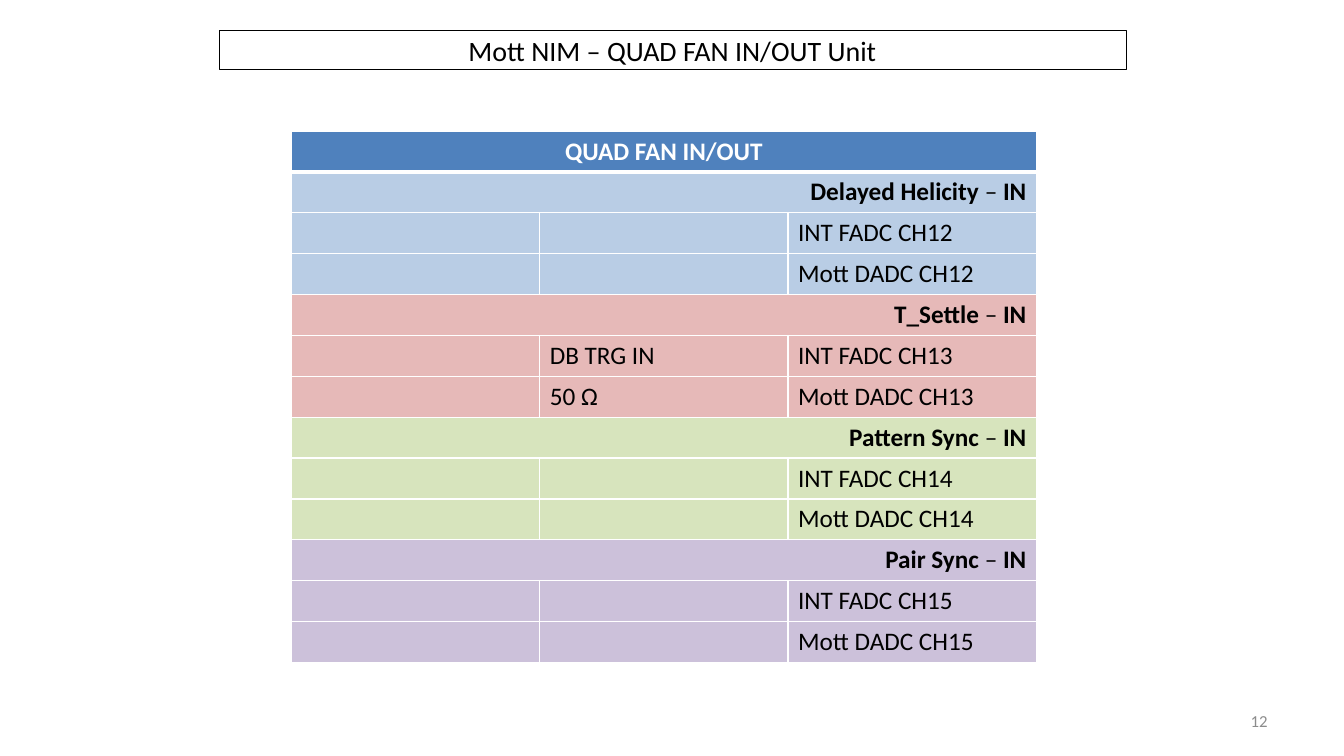
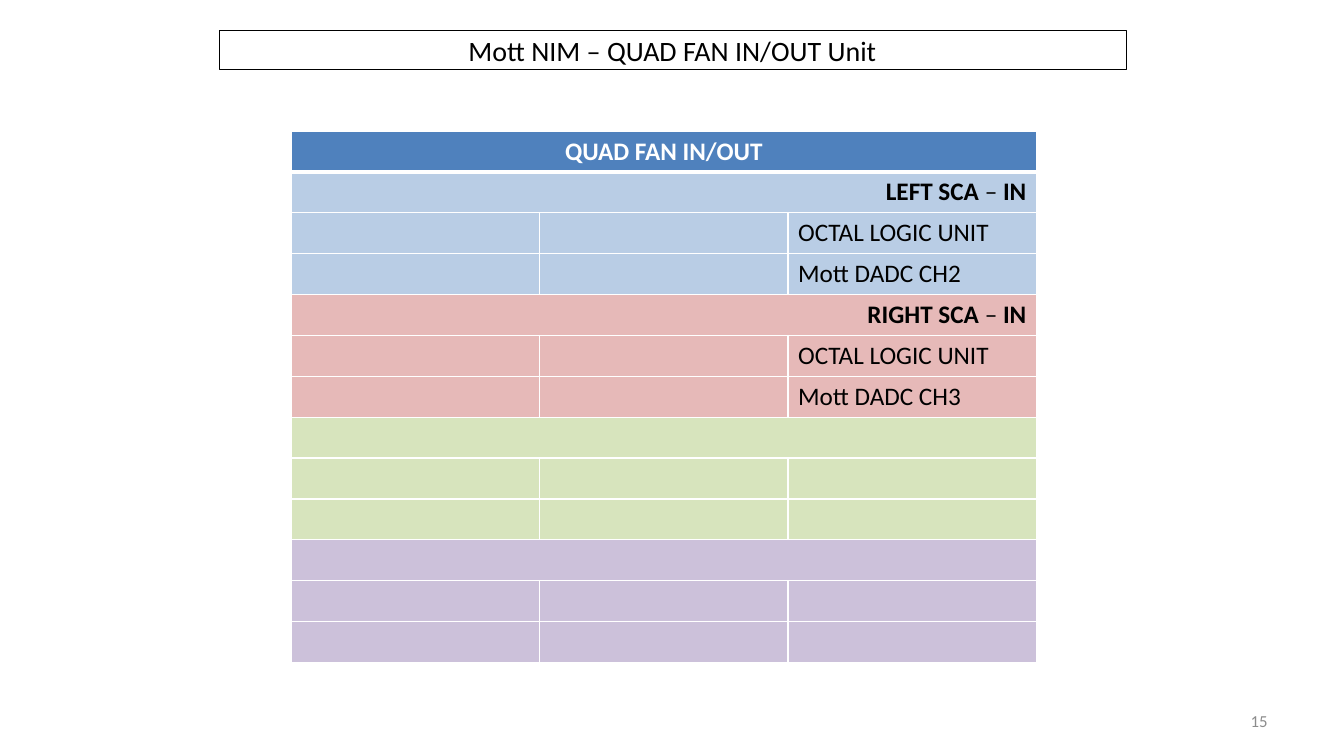
from lxml.etree import SubElement
from pptx import Presentation
from pptx.dml.color import RGBColor
from pptx.enum.text import MSO_ANCHOR, MSO_AUTO_SIZE, PP_ALIGN
from pptx.oxml.ns import qn
from pptx.util import Inches, Pt

FONT = "Calibri"
BLACK, WHITE, GREY = "000000", "FFFFFF", "8C8C8C"
HEADER_FILL = "4F81BD"
SECTION_FILLS = ["B9CDE5", "E6B9B8", "D7E4BD", "CCC1DA"]
TITLE_BOX = (2.17, 0.3, 9, 0.39)
TABLE_BOX = (2.89, 1.3, 7.39, 5.27)
NUMBER_BOX = (9.56, 6.95, 3.11, 0.4)
COLUMNS = 3
OUTPUT_ROWS = 2
SECTION_ROWS = 1 + OUTPUT_ROWS
TITLE = "Mott NIM – QUAD FAN IN/OUT Unit"
HEADER = "QUAD FAN IN/OUT"

FAN_SLIDES = [
    ("12", [
        ("Delayed Helicity", [["", "", "INT FADC CH12"], ["", "", "Mott DADC CH12"]]),
        ("T_Settle", [["", "DB TRG IN", "INT FADC CH13"], ["", "50 Ω", "Mott DADC CH13"]]),
        ("Pattern Sync", [["", "", "INT FADC CH14"], ["", "", "Mott DADC CH14"]]),
        ("Pair Sync", [["", "", "INT FADC CH15"], ["", "", "Mott DADC CH15"]]),
    ]),
    ("15", [
        ("LEFT SCA", [["", "", "OCTAL LOGIC UNIT"], ["", "", "Mott DADC CH2"]]),
        ("RIGHT SCA", [["", "", "OCTAL LOGIC UNIT"], ["", "", "Mott DADC CH3"]]),
        ("", [[""] * COLUMNS] * OUTPUT_ROWS),
        ("", [[""] * COLUMNS] * OUTPUT_ROWS),
    ]),
]


def rgb(value):
    return RGBColor.from_string(value)


def write(frame, text, size=18, color=BLACK, bold=False, align=PP_ALIGN.LEFT):
    paragraph = frame.paragraphs[0]
    paragraph.alignment = align
    run = paragraph.add_run()
    run.text = text
    run.font.name = FONT
    run.font.size = Pt(size)
    run.font.bold = bold
    run.font.color.rgb = rgb(color)


def style_cell(cell, fill, top=1, bottom=1):
    properties = cell._tc.get_or_add_tcPr()
    for side, width in (("L", 1), ("R", 1), ("T", top), ("B", bottom)):
        border = SubElement(properties, qn(f"a:ln{side}"), w=str(Pt(width)))
        SubElement(SubElement(border, qn("a:solidFill")), qn("a:srgbClr"), val=WHITE)
    cell.fill.solid()
    cell.fill.fore_color.rgb = rgb(fill)


def merge_row(table, row):
    heading = table.cell(row, 0)
    heading.merge(table.cell(row, COLUMNS - 1))
    return heading.text_frame


def add_section(table, first_row, name, outputs):
    heading = merge_row(table, first_row)
    if name:
        for text, bold in ((f"{name} ", True), ("– ", False), ("IN", True)):
            write(heading, text, bold=bold, align=PP_ALIGN.RIGHT)
    for row, labels in enumerate(outputs, first_row + 1):
        for column, label in enumerate(labels):
            if label:
                write(table.cell(row, column).text_frame, label)


def add_fan_table(slide, box, sections):
    row_count = 1 + SECTION_ROWS * len(sections)
    left, top, width, height = map(Inches, box)
    table = slide.shapes.add_table(row_count, COLUMNS, left, top, width, height).table
    for column in table.columns:
        column.width = Inches(box[2] / COLUMNS)
    for index, row in enumerate(table.rows):
        row.height = Inches(box[3] / row_count)
        fill = SECTION_FILLS[(index - 1) // SECTION_ROWS] if index else HEADER_FILL
        for cell in row.cells:
            style_cell(cell, fill, top=3 if index == 1 else 1, bottom=1 if index else 3)
    write(merge_row(table, 0), HEADER, color=WHITE, bold=True, align=PP_ALIGN.CENTER)
    for index, (name, outputs) in enumerate(sections):
        add_section(table, 1 + index * SECTION_ROWS, name, outputs)


def add_title(slide, box):
    title = slide.shapes.title
    title.left, title.top, title.width, title.height = map(Inches, box)
    title.line.color.rgb = rgb(BLACK)
    title.line.width = Pt(0.25)
    title.text_frame.auto_size = MSO_AUTO_SIZE.NONE
    title.text_frame.vertical_anchor = MSO_ANCHOR.MIDDLE
    write(title.text_frame, TITLE, size=20, align=PP_ALIGN.CENTER)


def add_page_number(slide, box, number):
    frame = slide.shapes.add_textbox(*map(Inches, box)).text_frame
    frame.word_wrap = True
    frame.vertical_anchor = MSO_ANCHOR.MIDDLE
    write(frame, number, size=12, color=GREY, align=PP_ALIGN.RIGHT)


def add_fan_slide(deck, number, sections):
    slide = deck.slides.add_slide(deck.slide_layouts.get_by_name("Title Only"))
    add_title(slide, TITLE_BOX)
    add_fan_table(slide, TABLE_BOX, sections)
    add_page_number(slide, NUMBER_BOX, number)


def main():
    deck = Presentation()
    deck.slide_width, deck.slide_height = Inches(13.33), Inches(7.5)
    for number, sections in FAN_SLIDES:
        add_fan_slide(deck, number, sections)
    deck.save("out.pptx")


if __name__ == "__main__":
    main()
